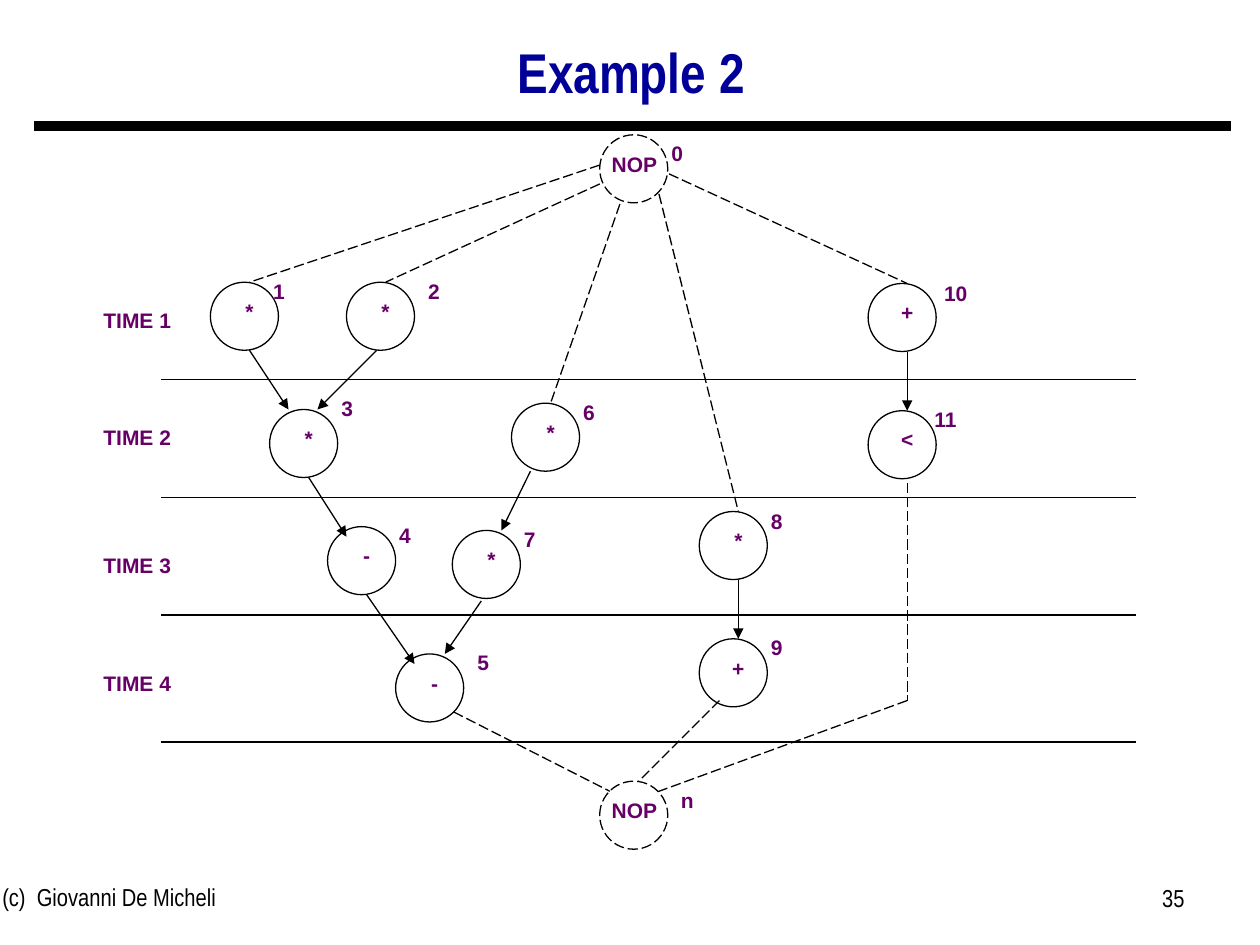
"""Build a slide with a scheduled sequencing graph on a grid of tenths of an inch."""
from lxml import etree
from pptx import Presentation
from pptx.dml.color import RGBColor
from pptx.enum.dml import MSO_LINE
from pptx.enum.shapes import MSO_CONNECTOR, MSO_SHAPE
from pptx.enum.text import MSO_ANCHOR, PP_ALIGN
from pptx.oxml.ns import qn
from pptx.util import Inches, Pt

LEFT, MID, RIGHT = PP_ALIGN.LEFT, PP_ALIGN.CENTER, PP_ALIGN.RIGHT
CENTRE = MSO_ANCHOR.MIDDLE
DASH = MSO_LINE.LONG_DASH
OVAL = MSO_SHAPE.OVAL
STRAIGHT = MSO_CONNECTOR.STRAIGHT

WIDTH, HEIGHT = Inches(10), Inches(7.5)
COLS, ROWS = 100, 75
SIZE = 5.4
TOP, BASE = (3.1, 0), (3.1, SIZE)
COLORS = {"ink": "000000", "title": "000099", "mark": "660066"}

# name: (corner, sign, offset of the name)
NODES = {
    "0": ((47.6, 10.7), "NOP", (2.3, 0)),
    "1": ((16.7, 22.4), "*", (1.6, -0.8)),
    "2": ((27.5, 22.4), "*", (3.1, -0.8)),
    "3": ((21.4, 32.5), "*", (2.3, -1.6)),
    "4": ((26, 41.8), "-", (2.3, -0.8)),
    "5": ((31.4, 51.9), "-", (3.1, -0.8)),
    "6": ((40.6, 32), "*", (2.3, -0.8)),
    "7": ((35.9, 42.1), "*", (2.3, -0.8)),
    "8": ((55.5, 40.6), "*", (2.3, -0.7)),
    "9": ((55.5, 50.7), "+", (2.3, -0.8)),
    "10": ((68.9, 22.5), "+", (3.1, -0.7)),
    "11": ((68.9, 32.6), "<", (2.3, -0.8)),
    "n": ((47.6, 62), "NOP", (3.1, 0)),
}
BEND = (72, 55.6)

ARROWS = [
    ("1", BASE, "3", (1.5, 0)),
    ("2", (2.4, SIZE), "3", (3.8, 0)),
    ("6", (1.5, SIZE), "7", (3.9, 0)),
    ("8", BASE, "9", TOP),
    ("10", BASE, "11", TOP),
    ("3", BASE, "4", (1.5, 0.8)),
    ("4", BASE, "5", (1.5, 0.8)),
    ("7", (2.3, 5.6), "5", (3.9, 0)),
]
DASHES = [
    ("0", (0, 2.4), "1", TOP),
    ("0", (0, 3.9), "2", TOP),
    ("0", (1.6, 5.5), "6", TOP),
    ("0", (4.7, 4.7), "8", TOP),
    ("0", (5.5, 3.1), "10", TOP),
    ("5", (4.6, 4.6), "n", (0.8, 0.8)),
    ("9", (1.6, 4.9), "n", TOP),
]
STEPS = [(23.9, 30.1), (33.2, 39.5), (43.4, 48.8), (52.7, 58.9)]


def col(num):
    """Turn grid columns into a length."""
    return round(WIDTH * num / COLS)


def row(num):
    """Turn grid rows into a length."""
    return round(HEIGHT * num / ROWS)


def box(x, y, wide, high):
    """Turn a grid box into left, top, width and height."""
    return col(x), row(y), col(wide), row(high)


def shift(spot, step):
    """Move a grid point by an offset."""
    return spot[0] + step[0], spot[1] + step[1]


def paint(name):
    """Look up a colour."""
    return RGBColor.from_string(COLORS[name])


def style(para, size, face, tint, bold, align):
    """Format a paragraph and its runs."""
    para.alignment = align
    for run in para.runs:
        font = run.font
        font.size, font.name, font.bold = Pt(size), face, bold
        font.color.rgb = paint(tint)


def write(shapes, text, area, size=12, face="Arial", tint="mark",
          bold=True, align=MID):
    """Add a text box."""
    frame = shapes.add_textbox(*box(*area)).text_frame
    frame.word_wrap = True
    frame.text = text
    style(frame.paragraphs[0], size, face, tint, bold, align)


def draw(shapes, start, end, dash=False, head=False, width=0.75):
    """Add a straight line, dashed or with an arrowhead if asked."""
    link = shapes.add_connector(STRAIGHT, col(start[0]), row(start[1]),
                                col(end[0]), row(end[1]))
    line = link.line
    line.color.rgb = paint("ink")
    line.width = Pt(width)
    if dash:
        line.dash_style = DASH
    if head:
        etree.SubElement(line._get_or_add_ln(), qn("a:tailEnd"), type="triangle")
    etree.SubElement(link._element.spPr, qn("a:effectLst"))


def node(shapes, spot, sign):
    """Add a circle grouped with its sign."""
    parts = shapes.add_group_shape().shapes
    ring = parts.add_shape(OVAL, *box(*spot, SIZE, SIZE))
    ring.shadow.inherit = False
    ring.fill.background()
    ring.line.color.rgb = paint("ink")
    ring.line.width = Pt(0.75)
    nop = sign == "NOP"
    if nop:
        ring.line.dash_style = DASH
    left, wide = (-2.3, 10.1) if nop else (0, 6.2)
    write(parts, sign, (*shift(spot, (left, 0.8)), wide, 3))


def join(shapes, links, **look):
    """Draw links between points given relative to their nodes."""
    for first, out, last, into in links:
        draw(shapes, shift(NODES[first][0], out),
             shift(NODES[last][0], into), **look)


def head(slide):
    """Place the title and the thick rule under it."""
    title = slide.shapes.title
    title.left, title.top, title.width, title.height = box(7.6, 1.5, 85, 9)
    frame = title.text_frame
    frame.text = "Example 2"
    frame.vertical_anchor = CENTRE
    para = frame.paragraphs[0]
    para.line_spacing = 0.9
    style(para, 32, "Arial Narrow", "title", True, MID)
    draw(slide.shapes, (2.7, 10), (97.7, 10), width=6)


def foot(shapes):
    """Write the credit and the page number."""
    look = {"size": 14, "face": "Arial Narrow", "tint": "ink", "bold": False}
    write(shapes, "(c)  Giovanni De Micheli", (-0.8, 69.5, 31.7, 5.2),
          align=LEFT, **look)
    write(shapes, "35", (71.7, 69.6, 23.3, 5.2), align=RIGHT, **look)


def main():
    """Build and save the slide."""
    deck = Presentation()
    deck.slide_width, deck.slide_height = WIDTH, HEIGHT
    slide = deck.slides.add_slide(deck.slide_layouts[5])
    shapes = slide.shapes
    head(slide)
    foot(shapes)
    for spot, sign, _ in NODES.values():
        node(shapes, spot, sign)
    for num, (top, rule) in enumerate(STEPS, 1):
        draw(shapes, (12.8, rule), (90.2, rule))
        write(shapes, f"TIME {num}", (5.1, top, 11.6, 3))
    join(shapes, DASHES, dash=True)
    join(shapes, ARROWS, head=True)
    draw(shapes, shift(NODES["11"][0], (3.1, 5.7)), BEND, dash=True)
    draw(shapes, BEND, shift(NODES["n"][0], (4.7, 0.8)), dash=True)
    for name, (spot, _, step) in NODES.items():
        write(shapes, name, (*shift(spot, step), 7.7, 3))
    deck.save("out.pptx")


if __name__ == "__main__":
    main()
